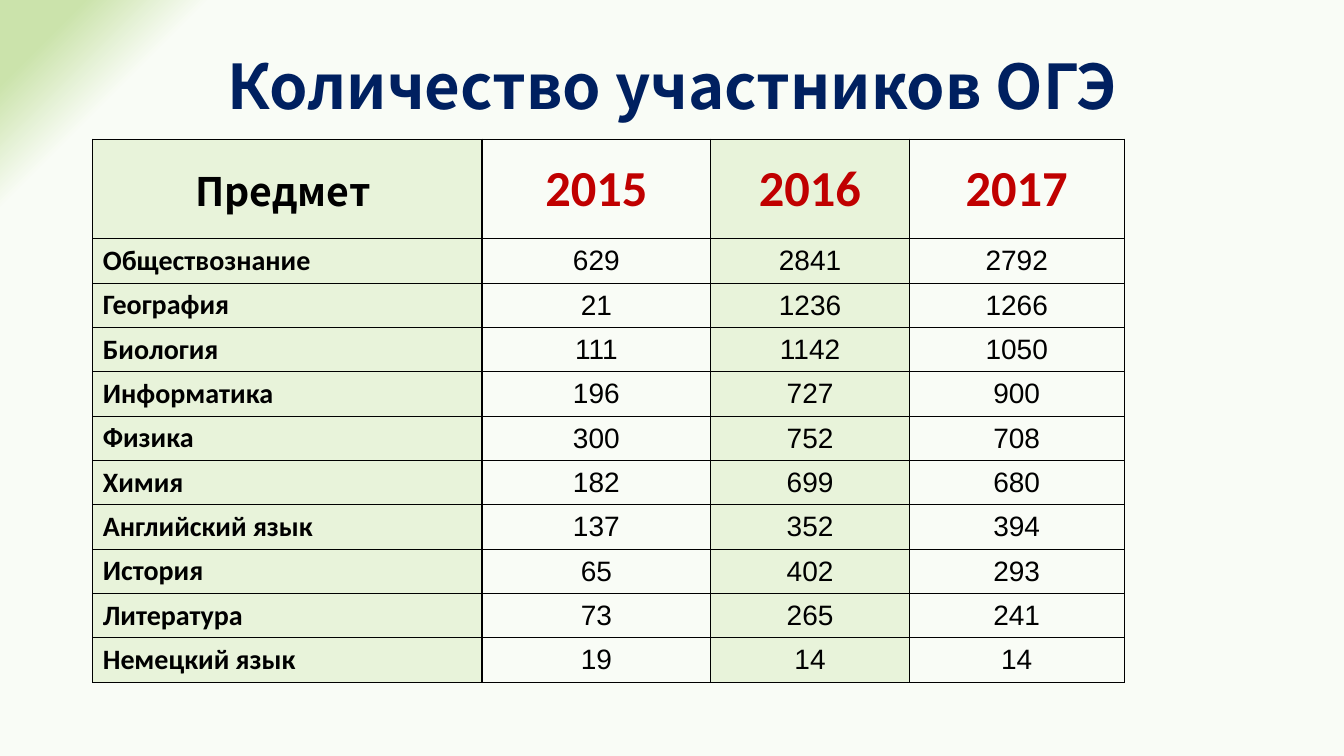
from pptx import Presentation
from pptx.dml.color import RGBColor
from pptx.enum.text import MSO_ANCHOR, PP_ALIGN
from pptx.oxml import parse_xml
from pptx.oxml.ns import nsdecls
from pptx.util import Inches, Pt

CENTER, LEFT = PP_ALIGN.CENTER, PP_ALIGN.LEFT
MIDDLE, TOP = MSO_ANCHOR.MIDDLE, MSO_ANCHOR.TOP

TITLE = "Количество участников ОГЭ"
HEADER = ("Предмет ", "2015", "2016", "2017")
SUBJECTS = [
    ("Обществознание", 629, 2841, 2792),
    ("География", 21, 1236, 1266),
    ("Биология", 111, 1142, 1050),
    ("Информатика", 196, 727, 900),
    ("Физика", 300, 752, 708),
    ("Химия", 182, 699, 680),
    ("Английский язык", 137, 352, 394),
    ("История", 65, 402, 293),
    ("Литература", 73, 265, 241),
    ("Немецкий язык", 19, 14, 14),
]
COLORS = {
    "title": "002060",
    "year": "C00000",
    "text": "000000",
    "border": "000000",
    "shade": "E8F3DA",
}
BACKGROUND_STOPS = [(90, "F9FCF6"), (96, "CBE3AB"), (100, "CBE3AB"), (100, "DCECC7")]
HEADING_FONT = "Noto Sans CJK KR"
COLUMN_WIDTHS = (3.86, 2.27, 1.97, 2.13)
HEADER_HEIGHT, ROW_HEIGHT = 0.99, 0.44
TABLE_LEFT, TABLE_TOP = 0.92, 1.38


def paint_background(page):
    stops = "".join(
        f'<a:gs pos="{position * 1000}"><a:srgbClr val="{color}"/></a:gs>'
        for position, color in BACKGROUND_STOPS
    )
    background = parse_xml(
        f'<p:bg {nsdecls("p", "a")}><p:bgPr><a:gradFill rotWithShape="1">'
        f'<a:gsLst>{stops}</a:gsLst>'
        '<a:path path="circle"><a:fillToRect l="100000" t="100000"/></a:path>'
        '<a:tileRect r="-100000" b="-100000"/>'
        '</a:gradFill><a:effectLst/></p:bgPr></p:bg>'
    )
    page.element.cSld.insert(0, background)


def write(frame, text, size, font, color, bold, align):
    para = frame.paragraphs[0]
    para.text = text
    para.alignment = align
    span = para.runs[0]
    span.font.size = Pt(size)
    span.font.name = font
    span.font.bold = bold
    span.font.color.rgb = RGBColor.from_string(COLORS[color])
    return para


def draw_borders(cell):
    properties = cell._tc.get_or_add_tcPr()
    for index, side in enumerate(("lnL", "lnR", "lnT", "lnB")):
        line = parse_xml(
            f'<a:{side} {nsdecls("a")} w="{Pt(1)}"><a:solidFill>'
            f'<a:srgbClr val="{COLORS["border"]}"/></a:solidFill></a:{side}>'
        )
        properties.insert(index, line)


def cell_style(row, column):
    if row == 0:
        if column == 0:
            return 28, HEADING_FONT, "text", True, CENTER
        return 36, "Calibri", "year", True, CENTER
    if column == 0:
        return 20, "Calibri", "text", True, LEFT
    return 20, "Arial", "text", False, CENTER


def add_title(page):
    box = page.shapes.add_textbox(Inches(0.92), Inches(0.4), Inches(11.5), Inches(0.98))
    frame = box.text_frame
    frame.word_wrap = True
    frame.vertical_anchor = MIDDLE
    para = write(frame, TITLE, 44, HEADING_FONT, "title", True, CENTER)
    para.line_spacing = 0.9


def add_results(page):
    rows = [HEADER] + SUBJECTS
    heights = [HEADER_HEIGHT] + [ROW_HEIGHT] * len(SUBJECTS)
    table = page.shapes.add_table(
        len(rows), len(HEADER), Inches(TABLE_LEFT), Inches(TABLE_TOP),
        Inches(sum(COLUMN_WIDTHS)), Inches(sum(heights)),
    ).table
    for column, width in zip(table.columns, COLUMN_WIDTHS):
        column.width = Inches(width)
    for row, height in zip(table.rows, heights):
        row.height = Inches(height)
    for r, values in enumerate(rows):
        for c, value in enumerate(values):
            cell = table.cell(r, c)
            write(cell.text_frame, str(value), *cell_style(r, c))
            cell.vertical_anchor = TOP if r and c == 0 else MIDDLE
            if c % 2 == 0:
                cell.fill.solid()
                cell.fill.fore_color.rgb = RGBColor.from_string(COLORS["shade"])
            else:
                cell.fill.background()
            draw_borders(cell)


def main():
    deck = Presentation()
    deck.slide_width, deck.slide_height = Inches(13.33), Inches(7.5)
    page = deck.slides.add_slide(deck.slide_layouts[6])
    paint_background(page)
    add_title(page)
    add_results(page)
    deck.save("out.pptx")


if __name__ == "__main__":
    main()
